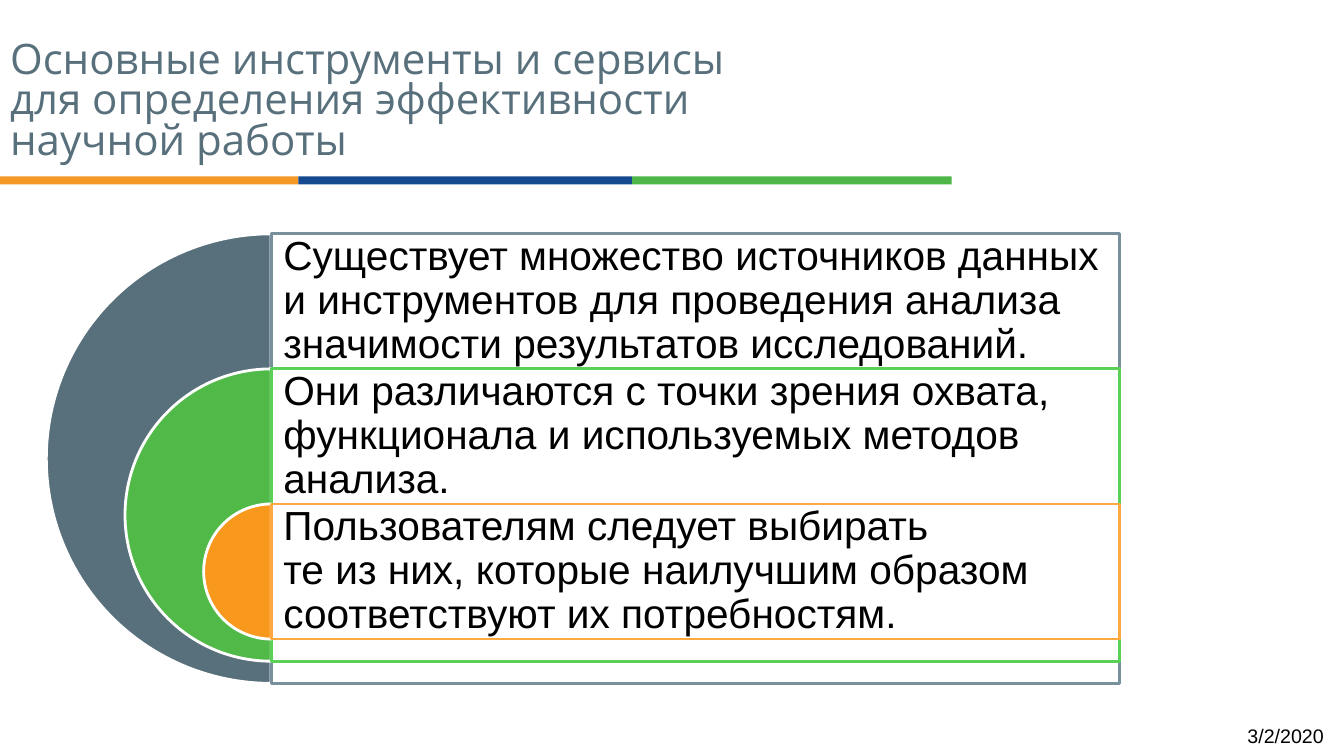
from lxml import etree
from pptx import Presentation
from pptx.dml.color import RGBColor
from pptx.enum.shapes import MSO_SHAPE
from pptx.enum.text import MSO_ANCHOR, MSO_AUTO_SIZE, PP_ALIGN
from pptx.oxml.ns import qn
from pptx.util import Inches, Pt

RECTANGLE, PIE = MSO_SHAPE.RECTANGLE, MSO_SHAPE.PIE
TOP, MIDDLE = MSO_ANCHOR.TOP, MSO_ANCHOR.MIDDLE
LEFT, RIGHT = PP_ALIGN.LEFT, PP_ALIGN.RIGHT
NO_AUTOFIT = MSO_AUTO_SIZE.NONE

WHITE = RGBColor(0xFF, 0xFF, 0xFF)
BLACK = RGBColor(0x00, 0x00, 0x00)
SLATE = RGBColor(0x58, 0x6F, 0x7C)
GREEN = RGBColor(0x51, 0xB9, 0x48)
ORANGE = RGBColor(0xF8, 0x98, 0x1D)
SLATE_EDGE = RGBColor(0x78, 0x90, 0x9C)
GREEN_EDGE = RGBColor(0x5A, 0xD1, 0x56)
ORANGE_EDGE = RGBColor(0xFE, 0xA9, 0x3F)
BAR_ORANGE = RGBColor(0xF4, 0x99, 0x25)
BAR_BLUE = RGBColor(0x15, 0x4A, 0x90)
BAR_GREEN = RGBColor(0x4E, 0xB7, 0x48)

prs = Presentation()
prs.slide_width, prs.slide_height = Inches(13.33), Inches(7.5)
slide = prs.slides.add_slide(prs.slide_layouts[5])
shapes = slide.shapes


def add_filled(kind, left, top, width, height, fill, edge=None):
    shape = shapes.add_shape(kind, Inches(left), Inches(top), Inches(width), Inches(height))
    shape.shadow.inherit = False
    shape.fill.solid()
    shape.fill.fore_color.rgb = fill
    if edge is None:
        shape.line.fill.background()
    else:
        shape.line.color.rgb = edge
        shape.line.width = Pt(2)
    return shape


def write_text(holder, text, font_name, size, color, align, anchor, spacing, inset_x, inset_y):
    frame = holder.text_frame
    frame.text = text
    frame_format = {
        "word_wrap": True, "auto_size": NO_AUTOFIT, "vertical_anchor": anchor,
        "margin_left": Inches(inset_x), "margin_right": Inches(inset_x),
        "margin_top": Inches(inset_y), "margin_bottom": Inches(inset_y),
    }
    for name, value in frame_format.items():
        setattr(frame, name, value)
    paragraph = frame.paragraphs[0]
    paragraph.alignment, paragraph.line_spacing = align, spacing
    for run in paragraph.runs:
        run.font.name, run.font.size = font_name, Pt(size)
        run.font.color.rgb = color


bar_left = 0
for bar_width, bar_color in [(2.96, BAR_ORANGE), (3.31, BAR_BLUE), (3.17, BAR_GREEN)]:
    add_filled(RECTANGLE, bar_left, 1.75, bar_width, 0.08, bar_color)
    bar_left += bar_width

title = shapes.title
title.left, title.top = Inches(0), Inches(0.37)
title.width, title.height = Inches(8.93), Inches(1.18)
write_text(
    title,
    "Основные инструменты и сервисы\vдля определения эффективности\vнаучной работы",
    "Open Sans", 30, SLATE, LEFT, TOP, 0.8, 0.1, 0.05,
)
shapes._spTree.append(title._element)

statements = [
    ("Существует множество источников данных и инструментов для проведения анализа "
     "значимости результатов исследований.", SLATE, SLATE_EDGE),
    ("Они различаются с точки зрения охвата, функционала и используемых методов анализа.",
     GREEN, GREEN_EDGE),
    ("Пользователям следует выбирать\vте из них, которые наилучшим образом "
     "соответствуют их потребностям.", ORANGE, ORANGE_EDGE),
]
axis, panel_width, row_height = 2.69, 8.41, 1.34
for row, (statement, pie_color, panel_edge) in enumerate(statements):
    top = 2.32 + row * row_height
    diameter = 4.46 - row * 1.56
    half_disc = add_filled(PIE, axis - diameter / 2, top, diameter, diameter, pie_color, WHITE)
    half_disc.adjustments[0], half_disc.adjustments[1] = 54, 162

    panel = add_filled(RECTANGLE, axis, top, panel_width, diameter, WHITE, panel_edge)
    panel_color = panel._element.spPr.find(qn("a:solidFill"))[0]
    etree.SubElement(panel_color, qn("a:alpha"), val="90000")

    caption = shapes.add_textbox(Inches(axis), Inches(top), Inches(panel_width), Inches(row_height))
    write_text(caption, statement, "Arial", 29, BLACK, LEFT, MIDDLE, 0.9, 0.12, 0.12)

date = shapes.add_textbox(Inches(10.23), Inches(7.1), Inches(3), Inches(0.4))
write_text(date, "3/2/2020", "Arial", 14, BLACK, RIGHT, MIDDLE, 1, 0.1, 0.05)

prs.save("out.pptx")
